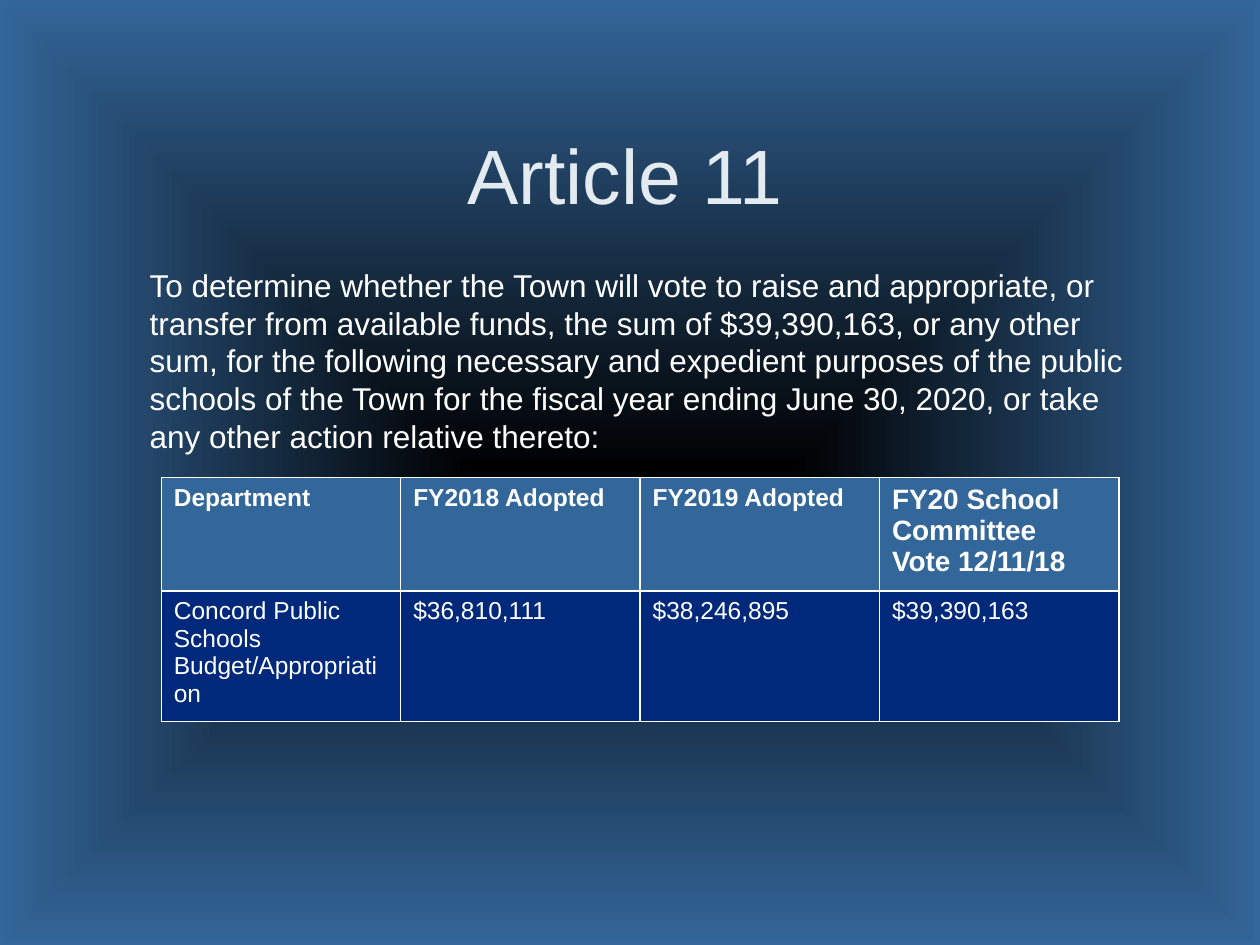
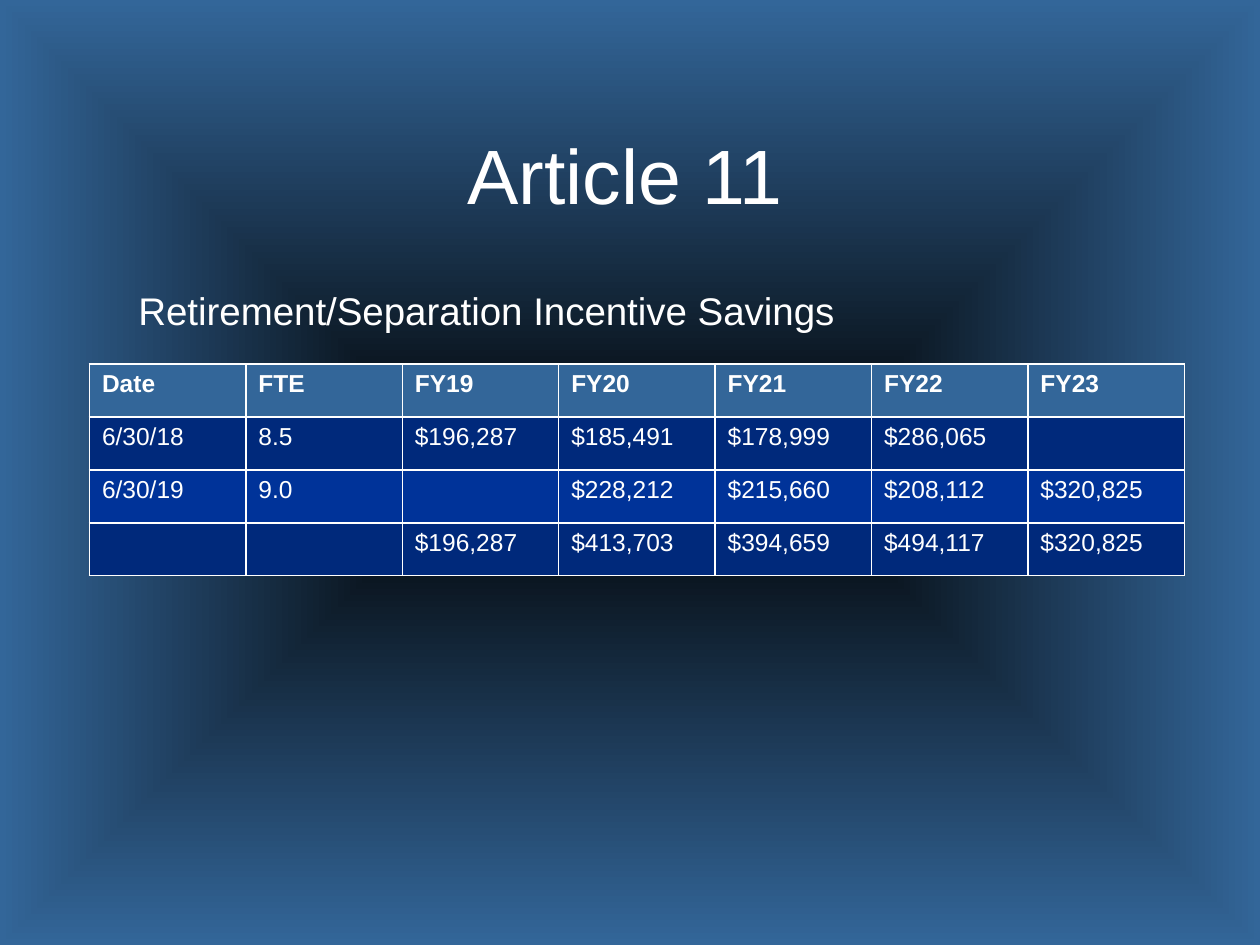
from lxml import etree
from pptx import Presentation
from pptx.dml.color import RGBColor
from pptx.enum.text import MSO_ANCHOR, PP_ALIGN
from pptx.oxml.ns import qn
from pptx.util import Inches, Pt

CENTER, LEFT = PP_ALIGN.CENTER, PP_ALIGN.LEFT
MIDDLE, TOP = MSO_ANCHOR.MIDDLE, MSO_ANCHOR.TOP
BLANK_LAYOUT = 6
FONT = "Arial"
COLORS = {
    "white": "FFFFFF",
    "pale": "E3EBF1",
    "black": "000000",
    "steel": "336699",
    "navy": "00297B",
    "royal": "003399",
}


def rgb(name):
    return RGBColor.from_string(COLORS[name])


class SlideBuilder:
    """Holds the deck style and the slide being built."""

    def __init__(self, deck):
        self.deck = deck
        self.page = None

    def new_page(self, title, title_color="white"):
        self.page = self.deck.slides.add_slide(self.deck.slide_layouts[BLANK_LAYOUT])
        self.background()
        self.text(title, 1, 0.92, 7.92, 0.92, 44, title_color, CENTER, MIDDLE)

    def background(self):
        fill = self.page.background.fill
        fill.gradient()
        for stop, color in zip(fill.gradient_stops, ("black", "steel")):
            stop.color.rgb = rgb(color)
        # Replace the linear direction by one that spreads from the centre
        gradient = self.page.element.find(".//" + qn("a:gradFill"))
        gradient.remove(gradient.find(qn("a:lin")))
        spread = etree.SubElement(gradient, qn("a:path"), path="shape")
        etree.SubElement(spread, qn("a:fillToRect"),
                         {side: "50000" for side in "ltrb"})

    def format(self, para, size, color="white", bold=False):
        for span in para.runs:
            span.font.name = FONT
            span.font.size = Pt(size)
            span.font.bold = bold
            span.font.color.rgb = rgb(color)

    def text(self, text, left, top, width, height, size,
             color="white", align=LEFT, anchor=TOP):
        box = self.page.shapes.add_textbox(
            Inches(left), Inches(top), Inches(width), Inches(height))
        frame = box.text_frame
        frame.word_wrap = True
        frame.vertical_anchor = anchor
        frame.text = text
        para = frame.paragraphs[0]
        para.alignment = align
        self.format(para, size, color)

    def table(self, rows, left, top, width, row_heights, header_sizes=None):
        """Draw a header row, then body rows in alternating blues."""
        count = len(rows[0])
        header_sizes = header_sizes or [14] * count
        table = self.page.shapes.add_table(
            len(rows), count, Inches(left), Inches(top),
            Inches(width), Inches(sum(row_heights))).table
        table.first_row = table.horz_banding = False
        for column in table.columns:
            column.width = Inches(width / count)
        for number, (values, height) in enumerate(zip(rows, row_heights)):
            table.rows[number].height = Inches(height)
            header = number == 0
            fill = "steel" if header else ("royal", "navy")[number % 2]
            for index, value in enumerate(values):
                size = header_sizes[index] if header else 14
                self.cell(table.cell(number, index), value, fill, size, header)

    def cell(self, cell, value, fill, size, bold):
        cell.text = value
        for para in cell.text_frame.paragraphs:
            self.format(para, size, bold=bold)
        self.borders(cell)
        cell.fill.solid()
        cell.fill.fore_color.rgb = rgb(fill)

    def borders(self, cell):
        properties = cell._tc.get_or_add_tcPr()
        for side in ("lnL", "lnR", "lnT", "lnB"):
            line = etree.SubElement(properties, qn("a:" + side), w=str(Pt(1)))
            solid = etree.SubElement(line, qn("a:solidFill"))
            etree.SubElement(solid, qn("a:srgbClr"), val=COLORS["white"])


def main():
    deck = Presentation()
    deck.slide_width, deck.slide_height = Inches(10), Inches(7.5)
    builder = SlideBuilder(deck)

    # Article wording and appropriation
    builder.new_page("Article 11", "pale")
    builder.text(
        "To determine whether the Town will vote to raise and appropriate, or "
        "transfer from available funds, the sum of $39,390,163, or any other sum, "
        "for the following necessary and expedient purposes of the public schools "
        "of the Town for the fiscal year ending June 30, 2020, or take any other "
        "action relative thereto:",
        1.09, 2.06, 8, 1.65, 18)
    appropriation = [
        ["Department", "FY2018 Adopted", "FY2019 Adopted",
         "FY20 School Committee\nVote 12/11/18"],
        ["Concord Public Schools Budget/Appropriation",
         "$36,810,111", "$38,246,895", "$39,390,163"],
    ]
    builder.table(appropriation, 1.28, 3.79, 7.6, [0.84, 0.98], [14, 14, 14, 16])

    # Savings by fiscal year
    builder.new_page("Article 11")
    builder.text("Retirement/Separation Incentive Savings", 1, 2.23, 7.93, 0.5, 22)
    savings = [
        ["Date", "FTE", "FY19", "FY20", "FY21", "FY22", "FY23"],
        ["6/30/18", "8.5", "$196,287", "$185,491", "$178,999", "$286,065", ""],
        ["6/30/19", "9.0", "", "$228,212", "$215,660", "$208,112", "$320,825"],
        ["", "", "$196,287", "$413,703", "$394,659", "$494,117", "$320,825"],
    ]
    builder.table(savings, 0.71, 2.89, 8.69, [0.42] * len(savings))

    deck.save("out.pptx")


if __name__ == "__main__":
    main()
